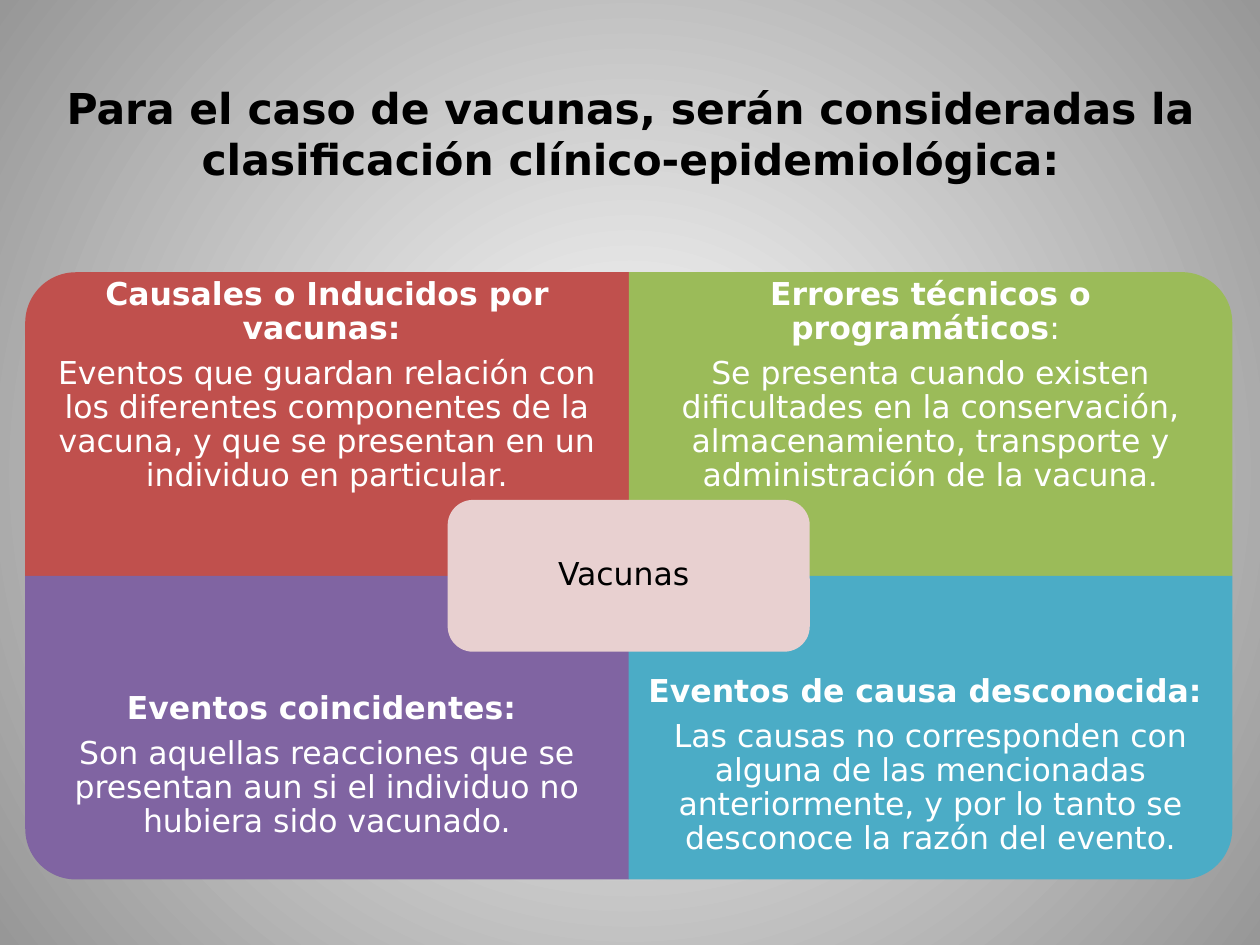
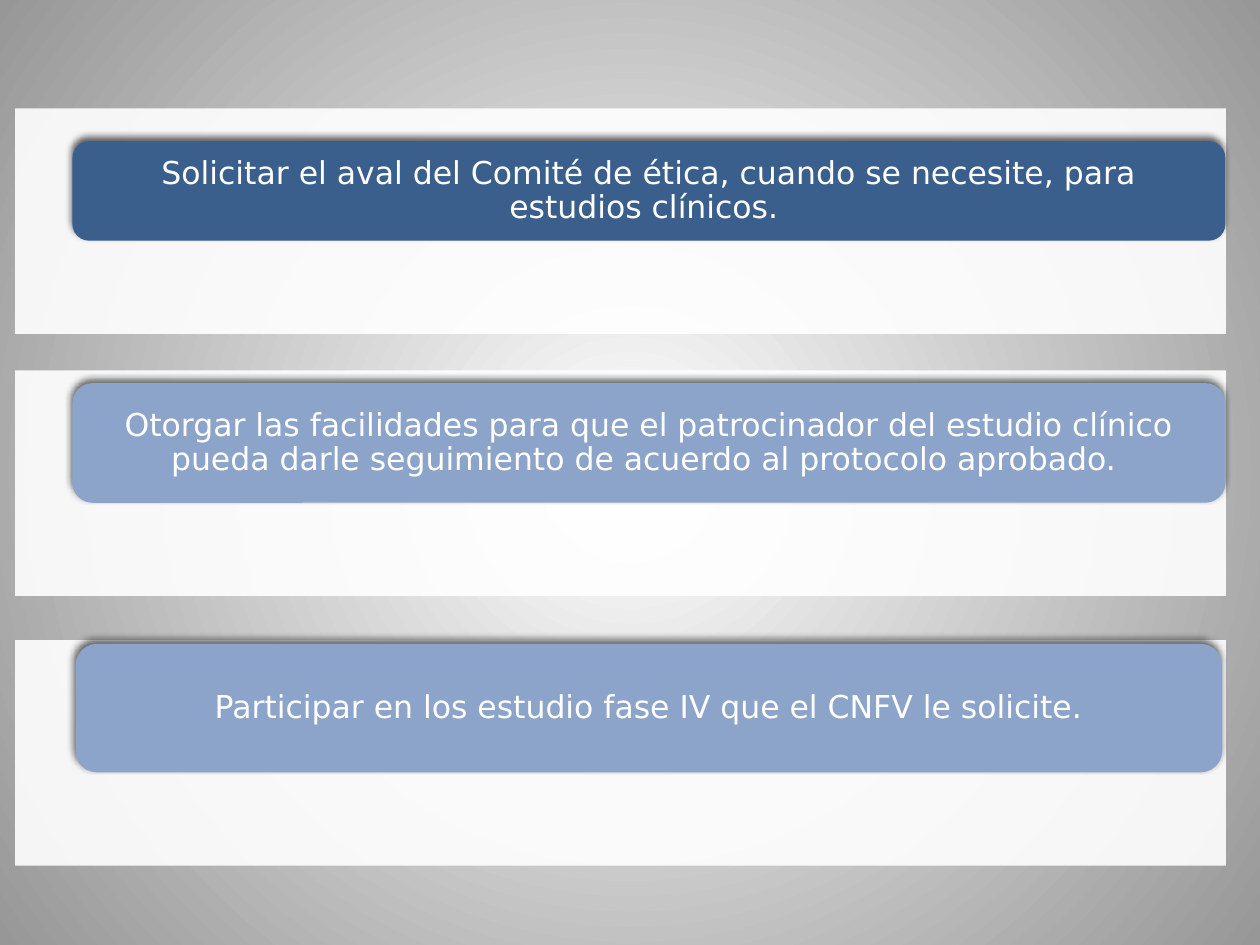
from dataclasses import dataclass

from lxml.etree import SubElement
from pptx import Presentation
from pptx.dml.color import RGBColor
from pptx.enum.shapes import MSO_SHAPE
from pptx.enum.text import MSO_ANCHOR, PP_ALIGN
from pptx.oxml import parse_xml
from pptx.oxml.ns import nsdecls, qn
from pptx.util import Inches, Pt


@dataclass(frozen=True)
class Theme:
    font: str = "DejaVu Sans"
    title_size: float = 24.3
    body_size: float = 18
    line_spacing: float = 0.9
    space_after: float = 6.3
    black: str = "000000"
    white: str = "FFFFFF"
    backdrop_edge: str = "979797"
    red: str = "C0504D"
    green: str = "9BBB59"
    purple: str = "8064A2"
    aqua: str = "4BACC6"
    rose: str = "E8D0D0"
    navy: str = "3A5F8C"
    periwinkle: str = "8CA4C9"
    panel_opacity: int = 90
    shadow_opacity: int = 60


THEME = Theme()
SLIDE_WIDTH, SLIDE_HEIGHT = 10, 7.5

TITLE = "Para el caso de vacunas, serán consideradas la clasificación clínico-epidemiológica:\v"
TITLE_BOX = (0.42, 0.68, 9.17, 1.15)

MATRIX_LEFT, MATRIX_TOP = 0.2, 2.16
CELL_WIDTH, CELL_HEIGHT = 4.79, 2.41
TEXT_SHARE = 0.75
HUB_TEXT = "Vacunas "
HUB_WIDTH, HUB_HEIGHT = 0.6 * CELL_WIDTH, 0.5 * CELL_HEIGHT

QUADRANTS = [
    {"column": 0, "row": 0, "rotation": 270, "color": THEME.red,
     "heading": "Causales o Inducidos por vacunas: ", "heading_tail": "",
     "body": "Eventos que guardan relación con los diferentes componentes de la vacuna, "
             "y que se presentan en un individuo en particular."},
    {"column": 1, "row": 0, "rotation": 0, "color": THEME.green,
     "heading": "Errores técnicos o programáticos", "heading_tail": ": ",
     "body": "Se presenta cuando existen dificultades en la conservación, "
             "almacenamiento, transporte y administración de la vacuna."},
    {"column": 0, "row": 1, "rotation": 180, "color": THEME.purple,
     "heading": "Eventos coincidentes: ", "heading_tail": "",
     "body": "Son aquellas reacciones que se presentan aun si el individuo "
             "no hubiera sido vacunado."},
    {"column": 1, "row": 1, "rotation": 90, "color": THEME.aqua,
     "heading": "Eventos de causa desconocida: ", "heading_tail": "",
     "body": "Las causas no corresponden con alguna de las mencionadas anteriormente, "
             "y por lo tanto se desconoce la razón del evento."},
]

PANEL_LEFT, PANEL_WIDTH, PANEL_HEIGHT = 0.12, 9.61, 1.79
BAR_CENTER = 5.15
DUTIES = [
    {"panel_top": 0.86, "bar_top": 1.12, "bar_width": 9.15, "bar_height": 0.79,
     "color": THEME.navy,
     "text": "Solicitar el aval del Comité de ética, cuando se necesite, "
             "para estudios clínicos. "},
    {"panel_top": 2.94, "bar_top": 3.04, "bar_width": 9.15, "bar_height": 0.95,
     "color": THEME.periwinkle,
     "text": "Otorgar las facilidades para que el patrocinador del estudio clínico "
             "pueda darle seguimiento de acuerdo al protocolo aprobado. "},
    {"panel_top": 5.08, "bar_top": 5.11, "bar_width": 9.1, "bar_height": 1.02,
     "color": THEME.periwinkle,
     "text": "Participar en los estudio fase IV que el CNFV le solicite."},
]


def inches(*lengths):
    return [Inches(length) for length in lengths]


def set_backdrop(master):
    fill = master.background.fill
    fill.solid()
    background = master.element.find(".//" + qn("p:bgPr"))
    solid = background.find(qn("a:solidFill"))
    gradient = parse_xml(
        f'<a:gradFill {nsdecls("a")} rotWithShape="1"><a:gsLst>'
        f'<a:gs pos="0"><a:srgbClr val="{THEME.white}"/></a:gs>'
        f'<a:gs pos="100000"><a:srgbClr val="{THEME.backdrop_edge}"/></a:gs>'
        '</a:gsLst><a:path path="circle">'
        '<a:fillToRect l="50000" t="50000" r="50000" b="50000"/>'
        '</a:path></a:gradFill>')
    background.replace(solid, gradient)


def add_block(page, preset, box, color):
    block = page.shapes.add_shape(preset, *inches(*box))
    block.shadow.inherit = False
    block.fill.solid()
    block.fill.fore_color.rgb = RGBColor.from_string(color)
    block.line.fill.background()
    return block


def set_opacity(color_element, percent):
    SubElement(color_element, qn("a:alpha")).set("val", str(percent * 1000))


def cast_shadow(block):
    effects = block.element.spPr.find(qn("a:effectLst"))
    shadow = SubElement(effects, qn("a:outerShdw"), blurRad=str(Pt(4)),
                        dist=str(Pt(3)), dir=str(245 * 60000), rotWithShape="0")
    color = SubElement(shadow, qn("a:srgbClr"), val=THEME.black)
    set_opacity(color, THEME.shadow_opacity)


def style_paragraph(para, color, size=THEME.body_size, bold=False):
    para.alignment = PP_ALIGN.CENTER
    para.font.name = THEME.font
    para.font.size = Pt(size)
    para.font.bold = bold
    para.font.color.rgb = RGBColor.from_string(color)


def prepare_frame(frame, horizontal, vertical):
    frame.word_wrap = True
    frame.vertical_anchor = MSO_ANCHOR.MIDDLE
    frame.margin_left = frame.margin_right = Inches(horizontal)
    frame.margin_top = frame.margin_bottom = Inches(vertical)


def write_body(para, text, color, bold=False):
    para.text = text
    para.line_spacing = THEME.line_spacing
    para.space_after = Pt(THEME.space_after)
    style_paragraph(para, color, bold=bold)


def add_title(page):
    title = page.shapes.title
    title.left, title.top, title.width, title.height = inches(*TITLE_BOX)
    title.text_frame.text = TITLE
    title.text_frame.vertical_anchor = MSO_ANCHOR.MIDDLE
    style_paragraph(title.text_frame.paragraphs[0], THEME.black, THEME.title_size, True)


def add_quadrant(page, quadrant):
    left = MATRIX_LEFT + quadrant["column"] * CELL_WIDTH
    top = MATRIX_TOP + quadrant["row"] * CELL_HEIGHT
    sideways = quadrant["rotation"] % 180 == 90
    width, height = (CELL_HEIGHT, CELL_WIDTH) if sideways else (CELL_WIDTH, CELL_HEIGHT)
    box = (left + (CELL_WIDTH - width) / 2, top + (CELL_HEIGHT - height) / 2, width, height)
    block = add_block(page, MSO_SHAPE.ROUND_1_RECTANGLE, box, quadrant["color"])
    block.rotation = quadrant["rotation"]

    text_height = TEXT_SHARE * CELL_HEIGHT
    text_top = top + quadrant["row"] * (CELL_HEIGHT - text_height)
    label = page.shapes.add_textbox(*inches(left, text_top, CELL_WIDTH, text_height))
    frame = label.text_frame
    prepare_frame(frame, 0.14, 0.14)
    heading = frame.paragraphs[0]
    write_body(heading, quadrant["heading"], THEME.white, bold=True)
    if quadrant["heading_tail"]:
        span = heading.add_run()
        span.text = quadrant["heading_tail"]
        span.font.bold = False
    write_body(frame.add_paragraph(), quadrant["body"], THEME.white)


def add_hub(page):
    box = (MATRIX_LEFT + CELL_WIDTH - HUB_WIDTH / 2,
           MATRIX_TOP + CELL_HEIGHT - HUB_HEIGHT / 2, HUB_WIDTH, HUB_HEIGHT)
    hub = add_block(page, MSO_SHAPE.ROUNDED_RECTANGLE, box, THEME.rose)
    prepare_frame(hub.text_frame, 0.07, 0.07)
    write_body(hub.text_frame.paragraphs[0], HUB_TEXT, THEME.black)


def add_duty(page, duty):
    panel_box = (PANEL_LEFT, duty["panel_top"], PANEL_WIDTH, PANEL_HEIGHT)
    panel = add_block(page, MSO_SHAPE.RECTANGLE, panel_box, THEME.white)
    set_opacity(panel.element.spPr.find(qn("a:solidFill"))[0], THEME.panel_opacity)

    width = duty["bar_width"]
    bar_box = (BAR_CENTER - width / 2, duty["bar_top"], width, duty["bar_height"])
    bar = add_block(page, MSO_SHAPE.ROUNDED_RECTANGLE, bar_box, duty["color"])
    cast_shadow(bar)
    prepare_frame(bar.text_frame, 0.25, 0)
    write_body(bar.text_frame.paragraphs[0], duty["text"], THEME.white)


def main():
    deck = Presentation()
    deck.slide_width, deck.slide_height = inches(SLIDE_WIDTH, SLIDE_HEIGHT)
    set_backdrop(deck.slide_master)

    classification = deck.slides.add_slide(deck.slide_layouts.get_by_name("Title Only"))
    add_title(classification)
    for quadrant in QUADRANTS:
        add_quadrant(classification, quadrant)
    add_hub(classification)

    duties = deck.slides.add_slide(deck.slide_layouts.get_by_name("Blank"))
    for duty in DUTIES:
        add_duty(duties, duty)

    deck.save("out.pptx")


if __name__ == "__main__":
    main()
